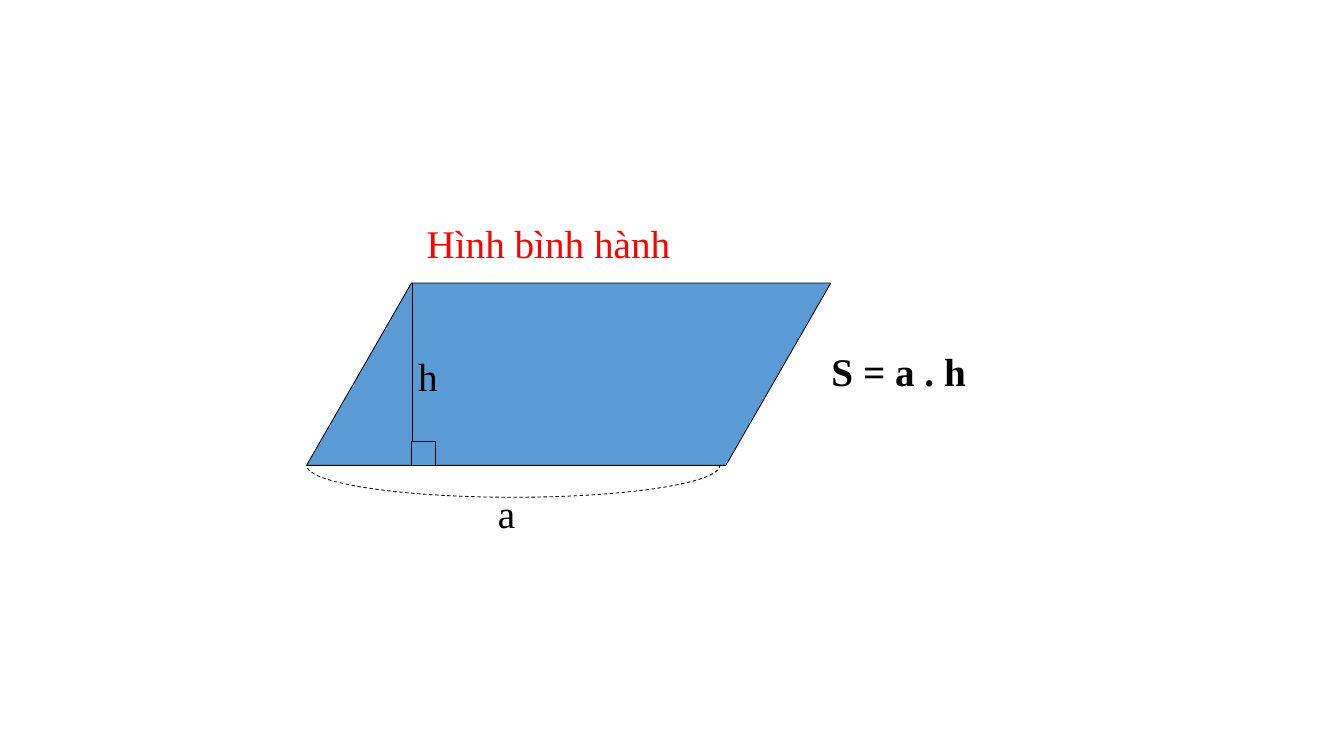
"""Build a slide showing a parallelogram and the formula for its area."""
import math
from dataclasses import dataclass

from lxml import etree
from pptx import Presentation
from pptx.dml.color import RGBColor
from pptx.enum.dml import MSO_LINE
from pptx.enum.shapes import MSO_CONNECTOR, MSO_SHAPE
from pptx.oxml.ns import qn
from pptx.util import Inches, Pt

PARALLELOGRAM = MSO_SHAPE.FLOWCHART_DATA
RECTANGLE = MSO_SHAPE.RECTANGLE
STRAIGHT = MSO_CONNECTOR.STRAIGHT
DASH = MSO_LINE.DASH


@dataclass(frozen=True)
class Theme:
    """Colours, font and type sizes."""
    fill: RGBColor = RGBColor(0x5B, 0x9B, 0xD5)
    ink: RGBColor = RGBColor(0, 0, 0)
    title: RGBColor = RGBColor(0xFF, 0, 0)
    font: str = "Times New Roman"
    text_size: float = 33.6
    line_width: float = 0.75


THEME = Theme()
SLIDE_WIDTH, SLIDE_HEIGHT = 16, 9

LABELS = [
    ("h", 4.88, 4.1, 0.66, THEME.ink, False),
    ("a", 5.83, 5.73, 0.76, THEME.ink, False),
    ("Hình bình hành", 4.98, 2.51, 4.35, THEME.title, False),
    ("S = a . h", 9.8, 4.03, 2.74, THEME.ink, True),
]
LABEL_HEIGHT = 0.67

LEFT, TOP, WIDTH, HEIGHT = 3.65, 3.37, 6.24, 2.17
BASE = TOP + HEIGHT
ALTITUDE_X = 4.91
CORNER_LEFT, CORNER_SIZE = 4.9, 0.28
ARC_CENTER, ARC_RADIUS, ARC_DEPTH = 6.11, 2.46, 0.38
ARC_START, ARC_STEPS = 175, 48


def style_line(line):
    line.color.rgb = THEME.ink
    line.width = Pt(THEME.line_width)


def add_filled_shape(slide, kind, *box):
    shape = slide.shapes.add_shape(kind, *map(Inches, box))
    shape.shadow.inherit = False
    shape.fill.solid()
    shape.fill.fore_color.rgb = THEME.fill
    style_line(shape.line)


def add_altitude(slide):
    ends = map(Inches, (ALTITUDE_X, TOP, ALTITUDE_X, BASE))
    altitude = slide.shapes.add_connector(STRAIGHT, *ends)
    style_line(altitude.line)
    etree.SubElement(altitude._element.spPr, qn("a:effectLst"))


def add_base_arc(slide):
    angles = [math.radians(ARC_START * (1 - step / ARC_STEPS))
              for step in range(ARC_STEPS + 1)]
    points = [(Inches(ARC_CENTER + ARC_RADIUS * math.cos(angle)),
               Inches(BASE + ARC_DEPTH * math.sin(angle))) for angle in angles]
    builder = slide.shapes.build_freeform(*points[0])
    builder.add_line_segments(points[1:], close=False)
    arc = builder.convert_to_shape()
    arc.shadow.inherit = False
    arc.fill.background()
    style_line(arc.line)
    arc.line.dash_style = DASH


def add_label(slide, text, left, top, width, color, bold):
    box = slide.shapes.add_textbox(*map(Inches, (left, top, width, LABEL_HEIGHT)))
    frame = box.text_frame
    frame.word_wrap = True
    frame.margin_top, frame.margin_bottom = Inches(0.1), Inches(0.03)
    frame.text = text
    font = frame.paragraphs[0].runs[0].font
    font.name = THEME.font
    font.size = Pt(THEME.text_size)
    font.color.rgb = color
    font.bold = bold


def main():
    presentation = Presentation()
    presentation.slide_width = Inches(SLIDE_WIDTH)
    presentation.slide_height = Inches(SLIDE_HEIGHT)
    slide = presentation.slides.add_slide(presentation.slide_layouts[6])
    add_filled_shape(slide, PARALLELOGRAM, LEFT, TOP, WIDTH, HEIGHT)
    add_altitude(slide)
    add_filled_shape(slide, RECTANGLE, CORNER_LEFT, BASE - CORNER_SIZE,
                     CORNER_SIZE, CORNER_SIZE)
    add_base_arc(slide)
    for label in LABELS:
        add_label(slide, *label)
    presentation.save("out.pptx")


if __name__ == "__main__":
    main()
